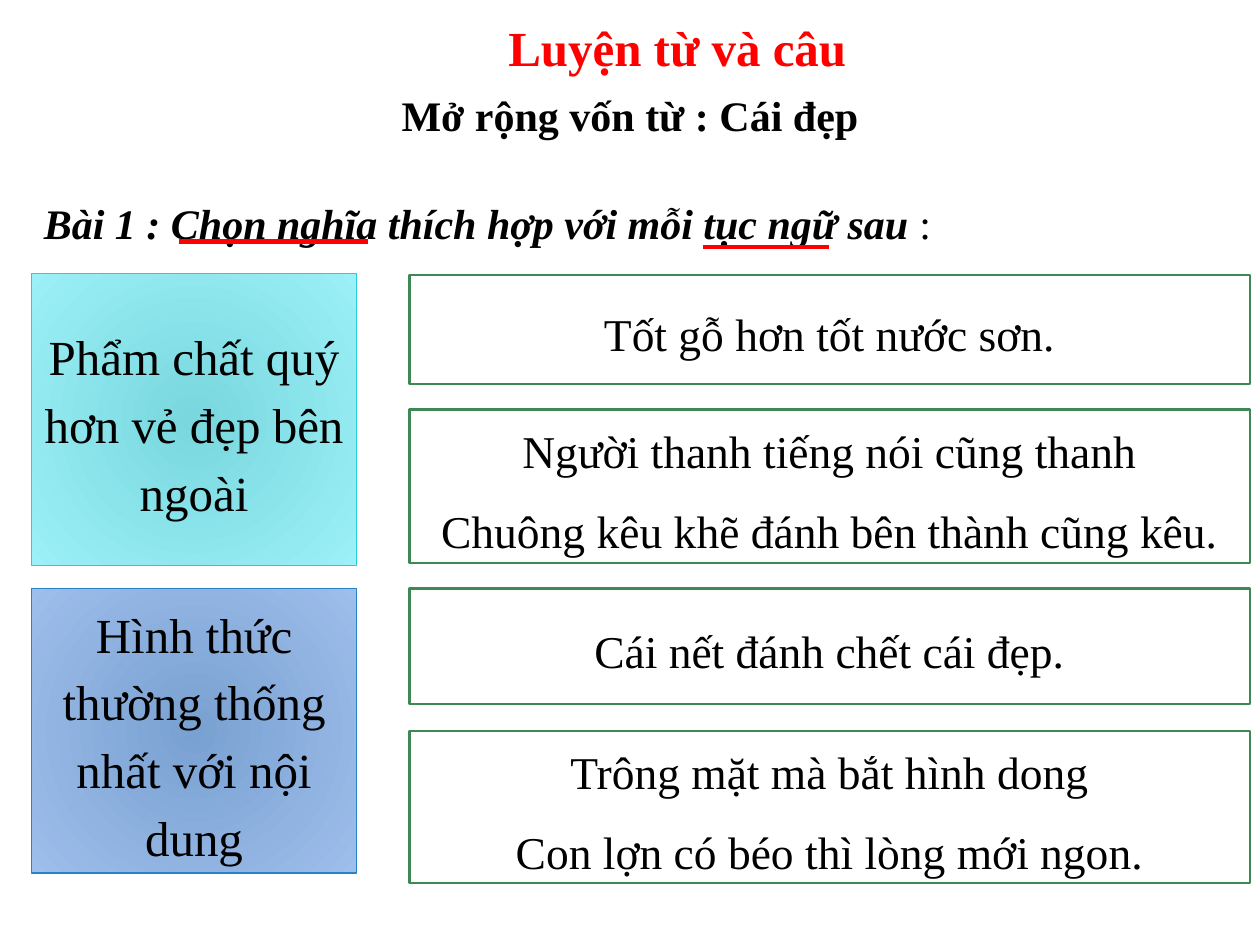
import pptx
import pptx.util
import pptx.dml.color
import pptx.enum.shapes
import pptx.enum.text
import pptx.oxml
import pptx.oxml.ns
from dataclasses import dataclass

Inches, Pt = pptx.util.Inches, pptx.util.Pt
RGB = pptx.dml.color.RGBColor.from_string
ALIGN = pptx.enum.text.PP_ALIGN
ANCHOR = pptx.enum.text.MSO_ANCHOR


@dataclass(frozen=True)
class Theme:
    font: str = "Times New Roman"
    text: str = "000000"
    accent: str = "FF0000"
    paper: str = "FFFFFF"
    proverb_line: str = "3E8853"
    # Inner colour, outer colour, outline
    quality: tuple = ("79D7DE", "9CF0F7", "27CED7")
    harmony: tuple = ("79A1D1", "9EBEEB", "2683C6")
    large: int = 28
    medium: int = 26
    small: int = 24


class LessonSlide:
    def __init__(self, prs, theme):
        self.theme = theme
        self.slide = prs.slides.add_slide(prs.slide_layouts[5])
        self.shapes = self.slide.shapes

    def style(self, p, size, color=None, bold=False, italic=False, align=ALIGN.CENTER):
        p.alignment = align
        f = p.font
        f.name, f.size, f.bold, f.italic = self.theme.font, Pt(size), bold, italic
        f.color.rgb = RGB(color or self.theme.text)

    def title(self, text, x, y, w, h):
        sp = self.shapes.title
        sp.left, sp.top, sp.width, sp.height = map(Inches, (x, y, w, h))
        tf = sp.text_frame
        tf.text = text
        tf.vertical_anchor = ANCHOR.TOP
        tf.auto_size = pptx.enum.text.MSO_AUTO_SIZE.SHAPE_TO_FIT_TEXT
        self.style(tf.paragraphs[0], self.theme.large, self.theme.accent, bold=True)

    def heading(self, text, x, y, w, h, **look):
        tf = self.shapes.add_textbox(*map(Inches, (x, y, w, h))).text_frame
        tf.word_wrap = True
        tf.auto_size = pptx.enum.text.MSO_AUTO_SIZE.SHAPE_TO_FIT_TEXT
        p = tf.paragraphs[0]
        p.text = text
        self.style(p, self.theme.small, bold=True, **look)
        return p

    def box(self, lines, x, y, w, h, size, outline, weight):
        sp = self.shapes.add_shape(
            pptx.enum.shapes.MSO_SHAPE.RECTANGLE, *map(Inches, (x, y, w, h)))
        sp.shadow.inherit = False
        sp.line.color.rgb = RGB(outline)
        sp.line.width = Pt(weight)
        tf = sp.text_frame
        tf.word_wrap = True
        tf.vertical_anchor = ANCHOR.MIDDLE
        tf.text = "\n".join(lines)
        for p in tf.paragraphs:
            self.style(p, size)
            p.line_spacing = 1.15
            p.space_after = Pt(10)
        return sp

    def meaning(self, text, x, y, w, h, colors):
        inner, outer, outline = colors
        sp = self.box([text], x, y, w, h, self.theme.large, outline, 0.75)
        sp.fill.gradient()
        for stop, position, color in zip(sp.fill.gradient_stops, (0, 1), (inner, outer)):
            stop.position = position
            stop.color.rgb = RGB(color)
        # Replace the linear direction with a circular one
        grad = sp._element.spPr.find(pptx.oxml.ns.qn("a:gradFill"))
        grad.remove(grad.find(pptx.oxml.ns.qn("a:lin")))
        grad.append(pptx.oxml.parse_xml(
            f'<a:path {pptx.oxml.ns.nsdecls("a")} path="circle">'
            '<a:fillToRect l="100000" t="100000" r="100000" b="100000"/></a:path>'))

    def proverb(self, lines, x, y, w, h):
        sp = self.box(lines, x, y, w, h, self.theme.medium, self.theme.proverb_line, 1.25)
        sp.fill.solid()
        sp.fill.fore_color.rgb = RGB(self.theme.paper)

    def underline(self, x, y, length):
        line = self.shapes.add_connector(
            pptx.enum.shapes.MSO_CONNECTOR.STRAIGHT,
            *map(Inches, (x, y, x + length, y)))
        line.line.color.rgb = RGB(self.theme.accent)
        line.line.width = Pt(2.75)
        line._element.spPr.append(pptx.oxml.parse_xml(
            f'<a:effectLst {pptx.oxml.ns.nsdecls("a")}/>'))


def main():
    prs = pptx.Presentation()
    prs.slide_width, prs.slide_height = Inches(10), Inches(7.5)
    theme = Theme()
    s = LessonSlide(prs, theme)

    # Lesson title, topic and task
    s.title("Luyện từ và câu", 2.75, 0.09, 5.25, 0.57)
    s.heading("Mở rộng vốn từ : Cái đẹp", 2.25, 0.66, 5.5, 0.5)
    task = s.heading("Bài 1 : Chọn nghĩa thích hợp với mỗi tục ngữ sau ",
                     0.25, 1.52, 9.67, 0.5, italic=True, align=ALIGN.LEFT)
    colon = task.add_run()
    colon.text = ":"
    colon.font.bold = colon.font.italic = False

    # Meanings on the left
    for text, y, h, colors in (
        ("Phẩm chất quý hơn vẻ đẹp bên ngoài", 2.17, 2.32, theme.quality),
        ("Hình thức thường thống nhất với nội dung", 4.67, 2.26, theme.harmony),
    ):
        s.meaning(text, 0.25, y, 2.58, h, colors)

    # Proverbs on the right
    for lines, y, h in (
        (["Tốt gỗ hơn tốt nước sơn."], 2.18, 0.87),
        (["Người thanh tiếng nói cũng thanh",
          "Chuông kêu khẽ đánh bên thành cũng kêu."], 3.25, 1.22),
        (["Cái nết đánh chết cái đẹp."], 4.67, 0.92),
        (["Trông mặt mà bắt hình dong",
          "Con lợn có béo thì lòng mới ngon."], 5.8, 1.21),
    ):
        s.proverb(lines, 3.25, y, 6.67, h)

    # Underlined key words of the task
    s.underline(1.42, 1.92, 1.5)
    s.underline(5.58, 1.96, 1)

    prs.save("out.pptx")


if __name__ == "__main__":
    main()
